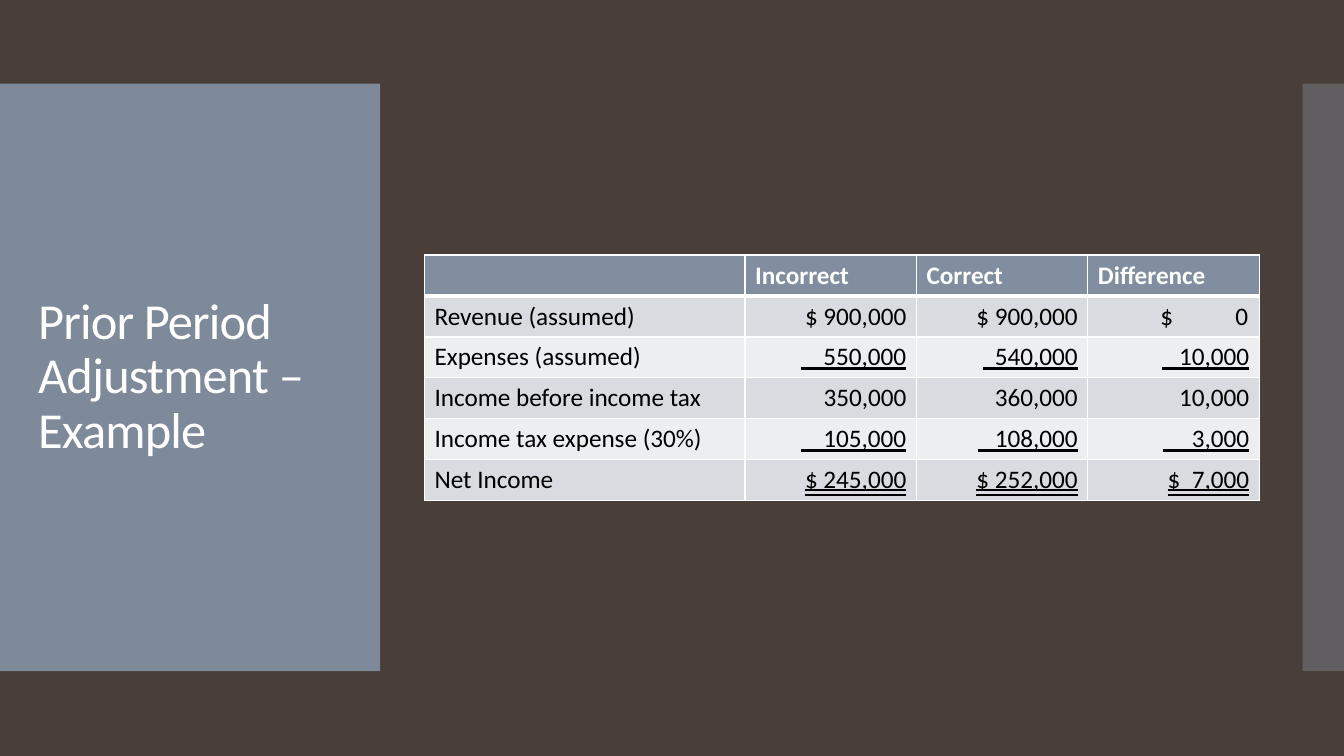
from dataclasses import dataclass

from lxml.etree import SubElement
from pptx import Presentation
from pptx.dml.color import RGBColor
from pptx.enum.shapes import MSO_SHAPE
from pptx.enum.text import MSO_ANCHOR, MSO_UNDERLINE, PP_ALIGN
from pptx.oxml import parse_xml
from pptx.oxml.ns import nsdecls, qn
from pptx.util import Inches, Pt

BROWN, SLATE, WHITE, BLACK = "4A3F38", "818E9F", "FFFFFF", "000000"
BANDS = ("D8DBDF", "EDEEF0")
SINGLE, DOUBLE = MSO_UNDERLINE.SINGLE_LINE, MSO_UNDERLINE.DOUBLE_LINE


@dataclass
class Panel:
    left: float
    width: float
    opacity: int


@dataclass
class StatementLine:
    label: str
    amounts: tuple[str, str, str]
    underline: MSO_UNDERLINE | None = None


PANELS = (Panel(0, 3.77, 95), Panel(12.92, 0.42, 40))
HEADINGS = ("", "Incorrect", "Correct", "Difference")
# Leading spaces in underlined amounts carry the sum rule past the digits
STATEMENT = (
    StatementLine("Revenue (assumed)", ("$ 900,000", "$ 900,000", "\t$\t0")),
    StatementLine("Expenses (assumed)", ("    550,000", "  540,000", "   10,000"), SINGLE),
    StatementLine("Income before income tax", ("350,000", "360,000", "10,000")),
    StatementLine("Income tax expense (30%)", ("    105,000", "   108,000", "     3,000"), SINGLE),
    StatementLine("Net Income", ("$ 245,000", "$ 252,000", "$  7,000"), DOUBLE),
)


def rgb(value: str) -> RGBColor:
    return RGBColor.from_string(value)


def paint(target, color: str) -> None:
    target.fill.solid()
    target.fill.fore_color.rgb = rgb(color)


def write(frame, text: str, *, size=18, color=BLACK, bold=False, underline=None,
          align=PP_ALIGN.LEFT, line_spacing=None, tracking=None):
    paragraph = frame.paragraphs[0]
    paragraph.alignment = align
    if line_spacing:
        paragraph.line_spacing = line_spacing
    run = paragraph.add_run()
    run.text = text
    font = run.font
    font.name, font.size, font.bold = "Calibri", Pt(size), bold
    font.color.rgb = rgb(color)
    if underline:
        font.underline = underline
    if tracking:
        font._element.set("spc", str(round(tracking * 100)))
    return paragraph


def add_panel(slide, panel: Panel) -> None:
    shape = slide.shapes.add_shape(MSO_SHAPE.RECTANGLE, Inches(panel.left), Inches(0.83),
                                   Inches(panel.width), Inches(5.83))
    shape.shadow.inherit = False
    shape.line.fill.background()
    paint(shape, SLATE)
    color = shape._element.spPr.find(".//" + qn("a:srgbClr"))
    SubElement(color, qn("a:alpha")).set("val", str(panel.opacity * 1000))


def set_borders(cell, top: float = 1, bottom: float = 1) -> None:
    widths = {"lnL": 1, "lnR": 1, "lnT": top, "lnB": bottom}
    properties = cell._tc.get_or_add_tcPr()
    for position, (side, width) in enumerate(widths.items()):
        properties.insert(position, parse_xml(
            f'<a:{side} {nsdecls("a")} w="{Pt(width)}"><a:solidFill>'
            f'<a:srgbClr val="{WHITE}"/></a:solidFill></a:{side}>'))


def add_tab_stops(paragraph, stops: dict[str, float]) -> None:
    tabs = SubElement(paragraph._p.get_or_add_pPr(), qn("a:tabLst"))
    for align, position in stops.items():
        tab = SubElement(tabs, qn("a:tab"))
        tab.set("pos", str(Inches(position)))
        tab.set("algn", align)


def add_statement(slide) -> None:
    table = slide.shapes.add_table(len(STATEMENT) + 1, len(HEADINGS), Inches(4.21), Inches(2.53),
                                   Inches(8.27), Inches(2.44)).table
    for column, width in zip(table.columns, (3.18, 1.7, 1.7, 1.7)):
        column.width = Inches(width)

    # Headings
    for cell, heading in zip(table.rows[0].cells, HEADINGS):
        paint(cell, SLATE)
        set_borders(cell, bottom=3)
        if heading:
            write(cell.text_frame, heading, color=WHITE, bold=True)

    # Statement lines
    for number, entry in enumerate(STATEMENT):
        cells = list(table.rows[number + 1].cells)
        for cell in cells:
            paint(cell, BANDS[number % 2])
            set_borders(cell, top=1 if number else 3)
        write(cells[0].text_frame, entry.label)
        for cell, amount in zip(cells[1:], entry.amounts):
            tabbed = "\t" in amount
            paragraph = write(cell.text_frame, amount, underline=entry.underline,
                              align=PP_ALIGN.LEFT if tabbed else PP_ALIGN.RIGHT)
            if tabbed:
                add_tab_stops(paragraph, {"l": 0.62, "r": 1.49})


def main() -> None:
    deck = Presentation()
    deck.slide_width, deck.slide_height = Inches(13.33), Inches(7.5)
    slide = deck.slides.add_slide(deck.slide_layouts[6])
    paint(slide.background, BROWN)

    # Side panels
    for panel in PANELS:
        add_panel(slide, panel)

    # Title
    title = slide.shapes.add_textbox(Inches(0.28), Inches(1.23), Inches(3.22), Inches(5.03)).text_frame
    title.word_wrap = True
    title.vertical_anchor = MSO_ANCHOR.MIDDLE
    write(title, "Prior Period Adjustment – Example", size=36, color=WHITE,
          line_spacing=0.9, tracking=-0.6)

    # Income statement
    add_statement(slide)
    deck.save("out.pptx")


if __name__ == "__main__":
    main()
